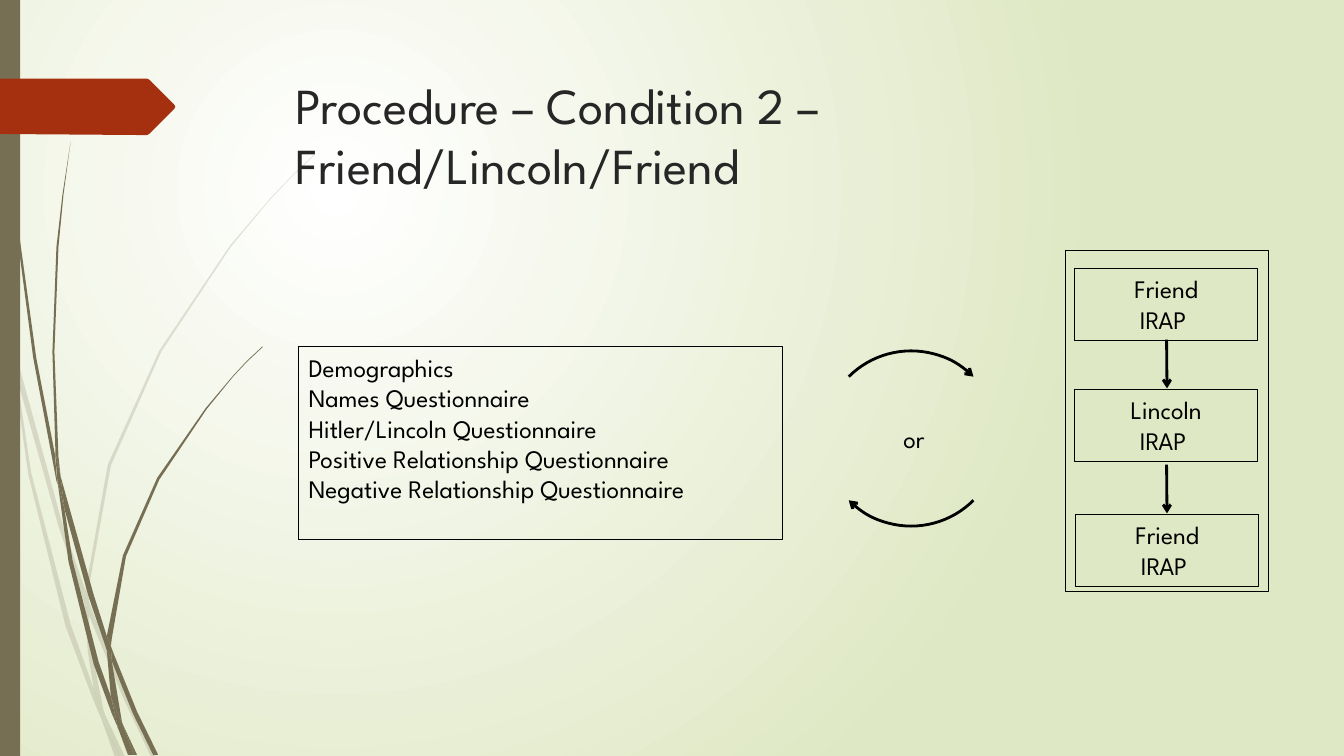
from pptx import Presentation
from pptx.util import Pt
from pptx.dml.color import RGBColor
from pptx.enum.shapes import MSO_CONNECTOR, MSO_SHAPE
from pptx.enum.text import MSO_ANCHOR, PP_ALIGN
from pptx.oxml import parse_xml
from pptx.oxml.ns import nsdecls, qn

RECT, ARC = MSO_SHAPE.RECTANGLE, MSO_SHAPE.ARC
LINE = MSO_CONNECTOR.STRAIGHT
LEFT, MID = PP_ALIGN.LEFT, PP_ALIGN.CENTER
TOP = MSO_ANCHOR.TOP
FONT = "League Spartan"
HEX = {"white": "FFFFFF", "green": "DFE8C4", "stem": "766F54",
       "red": "A53010", "title": "262626", "ink": "000000"}

# Content
TITLE = ["Procedure – Condition 2 – \vFriend/Lincoln/Friend"]
FORMS = ["Demographics", "Names Questionnaire",
         "Hitler/Lincoln Questionnaire",
         "Positive Relationship Questionnaire",
         "Negative Relationship Questionnaire"]
TASKS = [("Friend", 767.7, 191.9), ("Lincoln", 767.7, 278.3),
         ("Friend", 768.4, 367.6)]
ARCS = [(250.6, 315), (249.8, 135)]

# Grass blades: corners on a grid of 0.72 points
GRID = 0.72
PALE = [
    [(11, 350), (9, 322), (0, 282), (0, 299), (10, 344)],
    [(58, 522), (84, 599), (85, 586), (62, 520), (14, 345), (17, 376)],
    [(92, 607), (88, 596), (88, 610), (123, 694), (150, 751), (155, 751),
     (127, 692)],
    [(119, 751), (124, 751), (105, 711)],
    [(93, 683), (70, 619), (31, 469), (17, 376), (11, 350), (28, 470),
     (65, 621), (92, 693), (101, 714), (99, 707)],
    [(84, 599), (87, 646), (93, 683), (96, 692), (105, 711), (103, 706),
     (91, 646), (88, 610), (88, 608)],
    [(88, 584), (110, 462), (160, 349), (229, 245), (268, 198), (290, 175),
     (312, 154), (312, 153), (289, 175), (268, 197), (228, 244), (158, 348),
     (107, 461), (85, 584), (85, 586), (88, 596)],
    [(101, 714), (114, 751), (119, 751)],
    [(88, 608), (88, 610), (88, 596), (85, 586), (84, 599)],
    [(96, 692), (93, 683), (99, 707), (101, 714), (119, 751), (105, 711)],
]
DARK = [
    [(7, 110), (17, 233), (33, 355), (56, 477), (57, 481), (55, 457),
     (55, 453), (36, 355), (19, 232), (8, 109), (5, 48), (4, 0), (3, 0),
     (4, 48)],
    [(88, 592), (106, 645), (106, 633), (106, 631), (93, 590), (60, 472),
     (64, 505)],
    [(113, 649), (110, 641), (111, 656), (132, 708), (152, 749), (157, 749),
     (136, 706)],
    [(110, 691), (98, 657), (72, 556), (64, 505), (57, 477), (68, 557),
     (93, 659), (111, 708), (117, 722), (116, 717)],
    [(60, 472), (58, 453), (54, 349), (58, 245), (63, 193), (70, 141),
     (62, 193), (56, 245), (52, 349), (55, 449)],
    [(133, 749), (136, 749), (122, 719)],
    [(57, 477), (64, 505), (60, 472), (55, 449), (55, 453)],
    [(111, 633), (125, 552), (158, 476), (205, 406), (231, 374), (245, 359),
     (261, 344), (260, 344), (245, 358), (231, 373), (204, 405), (156, 474),
     (122, 551), (106, 631), (110, 641)],
    [(117, 722), (127, 749), (131, 749)],
    [(106, 645), (110, 691), (116, 706), (122, 719), (121, 716), (111, 656),
     (109, 651)],
    [(106, 645), (109, 651), (111, 656), (110, 641), (106, 631), (106, 633)],
    [(116, 706), (110, 691), (116, 717), (117, 722), (130, 749), (133, 749),
     (122, 719)],
]
TAG = [(173, 108), (148, 133), (146, 134), (136, 134), (0, 133), (0, 78),
       (136, 78), (146, 78), (148, 79), (173, 104), (174, 106)]

deck = Presentation()
deck.slide_width, deck.slide_height = Pt(960), Pt(540)
page = deck.slides.add_slide(deck.slide_layouts[6])
parts = page.shapes


def paint(shape, fill=None, line=False):
    shape.shadow.inherit = False
    if fill:
        shape.fill.solid()
        shape.fill.fore_color.rgb = RGBColor.from_string(HEX[fill])
    else:
        shape.fill.background()
    if line:
        ink(shape, 0.75)
    else:
        shape.line.fill.background()
    return shape


def ink(shape, width):
    shape.line.color.rgb = RGBColor.from_string(HEX["ink"])
    shape.line.width = Pt(width)


def arrow(shape):
    ink(shape, 2)
    shape.element.spPr.find(qn("a:ln")).append(
        parse_xml(f'<a:tailEnd {nsdecls("a")} type="arrow"/>'))


def write(shape, lines, size=18, color="ink", align=LEFT, top=3.6, wrap=True):
    frame = shape.text_frame
    style = {"word_wrap": wrap, "vertical_anchor": TOP, "margin_left": Pt(7.2),
             "margin_right": Pt(7.2), "margin_top": Pt(top),
             "margin_bottom": Pt(3.6)}
    for key, val in style.items():
        setattr(frame, key, val)
    for i, text in enumerate(lines):
        para = frame.add_paragraph() if i else frame.paragraphs[0]
        para.text, para.alignment = text, align
        for run in para.runs:
            for key, val in {"name": FONT, "size": Pt(size)}.items():
                setattr(run.font, key, val)
            run.font.color.rgb = RGBColor.from_string(HEX[color])


def box(x, y, w, h, kind=RECT):
    return parts.add_shape(kind, Pt(x), Pt(y), Pt(w), Pt(h))


def label(x, y, w, h):
    return parts.add_textbox(Pt(x), Pt(y), Pt(w), Pt(h))


def outline(dots, fill):
    dots = [(Pt(x * GRID), Pt(y * GRID)) for x, y in dots]
    pen = parts.build_freeform(*dots[0])
    pen.add_line_segments(dots[1:], close=True)
    return paint(pen.convert_to_shape(), fill)


# Background glow
back = page.background.fill
back.gradient()
for stop, name in zip(back.gradient_stops, ("white", "green")):
    stop.color.rgb = RGBColor.from_string(HEX[name])
grad = page.element.find(".//" + qn("a:gradFill"))
grad.replace(grad.find(qn("a:lin")), parse_xml(
    f'<a:path {nsdecls("a")} path="circle"><a:fillToRect l="50000" t="50000"'
    ' r="100000" b="100000"/></a:path>'))

# Grass, side bar and red tag
for dots in PALE:
    tint = outline(dots, "stem").element.spPr.find(".//" + qn("a:srgbClr"))
    tint.append(parse_xml(f'<a:alpha {nsdecls("a")} val="20000"/>'))
for dots in DARK:
    outline(dots, "stem")
paint(box(0, 0, 14.4, 540), "stem")
outline(TAG, "red")

# Title
write(label(204.1, 49.2, 702, 100.8), TITLE, 36, "title")

# Order loop
write(label(638.1, 298.8, 30.2, 28.8), ["or"], wrap=False)
for y, turn in ARCS:
    arc = paint(box(587.8, y, 126, 126, ARC))
    arc.rotation = turn
    arrow(arc)

# Task column: each arrow ends just above the next box
paint(box(761, 179, 145.1, 243.4), line=True)
for i, (name, x, y) in enumerate(TASKS):
    task = paint(box(x, y, 130.6, 51.1), line=True)
    write(task, [name, "IRAP "], align=MID)
    if i:
        link = parts.add_connector(LINE, Pt(833.3), Pt(y - 35.7),
                                   Pt(833.6), Pt(y - 0.9))
        arrow(link)
        link.element.spPr.append(parse_xml(f'<a:effectLst {nsdecls("a")}/>'))

# Questionnaire list
write(paint(box(213.3, 247.3, 345.6, 138.2), line=True), FORMS, top=4.4)

deck.save("out.pptx")
